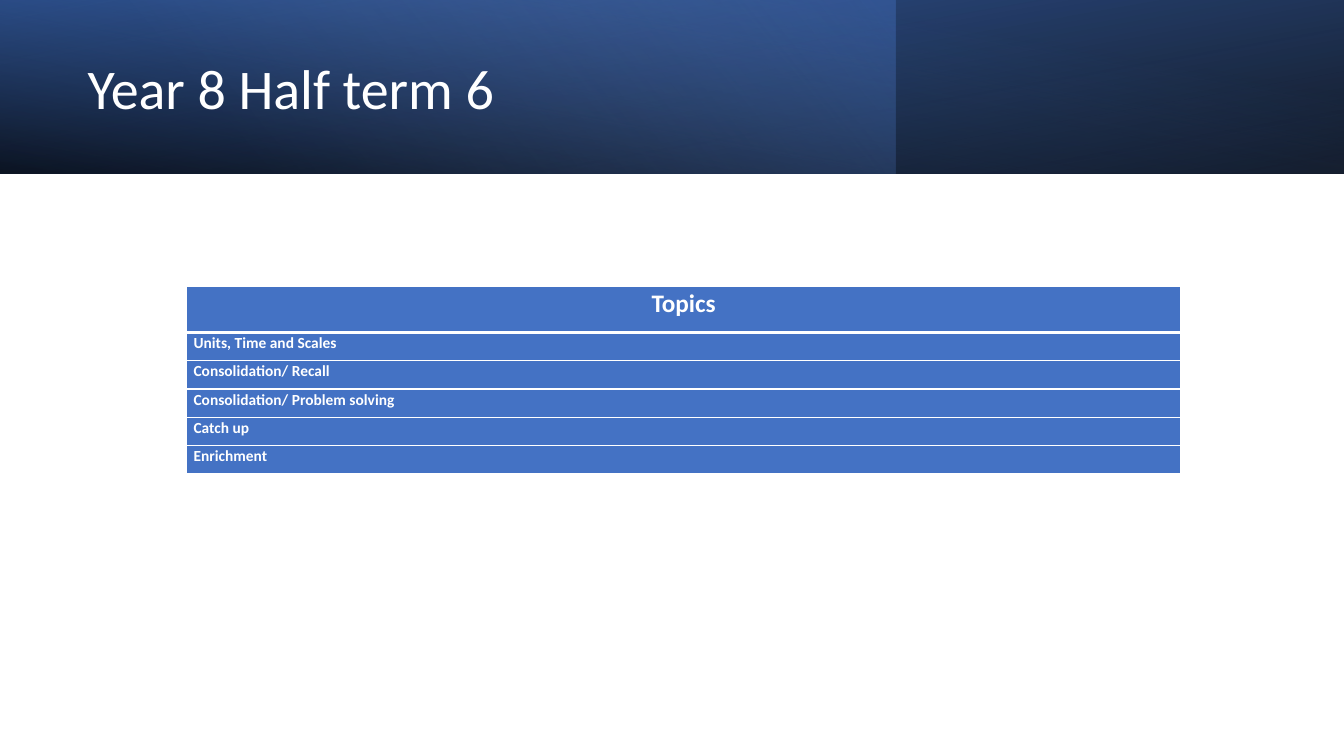
import lxml.etree
import pptx
import pptx.dml.color
import pptx.enum.shapes
import pptx.enum.text
import pptx.oxml.ns
import pptx.util

RGBColor = pptx.dml.color.RGBColor
Inches = pptx.util.Inches
Pt = pptx.util.Pt
qn = pptx.oxml.ns.qn
PP_ALIGN = pptx.enum.text.PP_ALIGN
ANCHOR = pptx.enum.text.MSO_ANCHOR

BLACK = RGBColor(0x00, 0x00, 0x00)
WHITE = RGBColor(0xFF, 0xFF, 0xFF)
NAVY = RGBColor(0x2F, 0x55, 0x97)
BLUE = RGBColor(0x44, 0x72, 0xC4)
PALE_BLUE = RGBColor(0x8F, 0xAA, 0xDC)

FONT = "Calibri"
SLIDE_WIDTH, SLIDE_HEIGHT = 13.33, 7.5
TOPICS = [
    "Units, Time and Scales",
    "Consolidation/ Recall",
    "Consolidation/ Problem solving",
    "Catch up",
    "Enrichment",
]


def write_text(frame, text, size, bold=False, align=PP_ALIGN.LEFT, spacing=1.0):
    paragraph = frame.paragraphs[0]
    paragraph.alignment = align
    paragraph.line_spacing = spacing
    run = paragraph.add_run()
    run.text = text
    run.font.name = FONT
    run.font.size = Pt(size)
    run.font.bold = bold
    run.font.color.rgb = WHITE


def add_gradient_layer(slide, box, stops, angle, rotation=0, flipped=False):
    """Add a rectangle with stops of (position, colour, opacity in percent) and a clockwise angle."""
    layer = slide.shapes.add_shape(
        pptx.enum.shapes.MSO_SHAPE.RECTANGLE, *(Inches(length) for length in box))
    layer.shadow.inherit = False
    layer.line.fill.background()
    layer.rotation = rotation
    if flipped:
        layer._element.spPr.find(qn("a:xfrm")).set("flipH", "1")
    layer.fill.gradient()
    layer.fill.gradient_angle = 360 - angle
    for stop, (position, colour, _) in zip(layer.fill.gradient_stops, stops):
        stop.position = position
        stop.color.rgb = colour
    colours = layer._element.spPr.find(qn("a:gradFill")).iter(qn("a:srgbClr"))
    for element, (_, _, opacity) in zip(colours, stops):
        lxml.etree.SubElement(element, qn("a:alpha"), val=str(opacity * 1000))


def add_banner(slide, left, top, width, height, title):
    full = (left, top, width, height)
    add_gradient_layer(slide, full, [(0, BLACK, 96), (1, NAVY, 100)], 100,
                       rotation=180, flipped=True)
    add_gradient_layer(slide, (left, top, width * 2 / 3, height),
                       [(0, BLUE, 41), (0.74, PALE_BLUE, 0)], 140)
    add_gradient_layer(slide, full, [(0, BLACK, 63), (0.78, BLUE, 15)], 260, flipped=True)

    heading = slide.shapes.add_textbox(
        Inches(left + 0.77), Inches(top + 0.27), Inches(7.72), Inches(1.27))
    heading.text_frame.word_wrap = True
    heading.text_frame.vertical_anchor = ANCHOR.MIDDLE
    write_text(heading.text_frame, title, size=40, spacing=0.9)


def set_borders(cell, **widths):
    """Draw white borders with widths in points, keyed by side."""
    properties = cell._tc.get_or_add_tcPr()
    for index, (side, width) in enumerate(widths.items()):
        border = lxml.etree.Element(qn(f"a:ln{side}"), w=str(Pt(width)))
        fill = lxml.etree.SubElement(border, qn("a:solidFill"))
        lxml.etree.SubElement(fill, qn("a:srgbClr"), val=str(WHITE))
        properties.insert(index, border)


def add_topics_table(slide, left, top, width, header_height, row_height):
    height = header_height + row_height * len(TOPICS)
    table = slide.shapes.add_table(
        len(TOPICS) + 1, 1, Inches(left), Inches(top), Inches(width), Inches(height)).table
    for index, text in enumerate(["Topics"] + TOPICS):
        is_header = index == 0
        table.rows[index].height = Inches(header_height if is_header else row_height)
        cell = table.cell(index, 0)
        cell.fill.solid()
        cell.fill.fore_color.rgb = BLUE
        cell.margin_left = cell.margin_right = Inches(0.07)
        cell.margin_top = cell.margin_bottom = 0
        cell.vertical_anchor = ANCHOR.TOP
        set_borders(cell, L=1, R=1, T=3 if index == 1 else 1, B=3 if is_header else 1)
        write_text(cell.text_frame, text, size=18 if is_header else 11, bold=True,
                   align=PP_ALIGN.CENTER if is_header else PP_ALIGN.LEFT, spacing=1.07)


def main():
    presentation = pptx.Presentation()
    presentation.slide_width = Inches(SLIDE_WIDTH)
    presentation.slide_height = Inches(SLIDE_HEIGHT)
    slide = presentation.slides.add_slide(presentation.slide_layouts[6])
    add_banner(slide, 0, 0, SLIDE_WIDTH, 1.72, "Year 8 Half term 6")
    add_topics_table(slide, 1.85, 2.84, 9.86, header_height=0.46, row_height=0.28)
    presentation.save("out.pptx")


if __name__ == "__main__":
    main()
